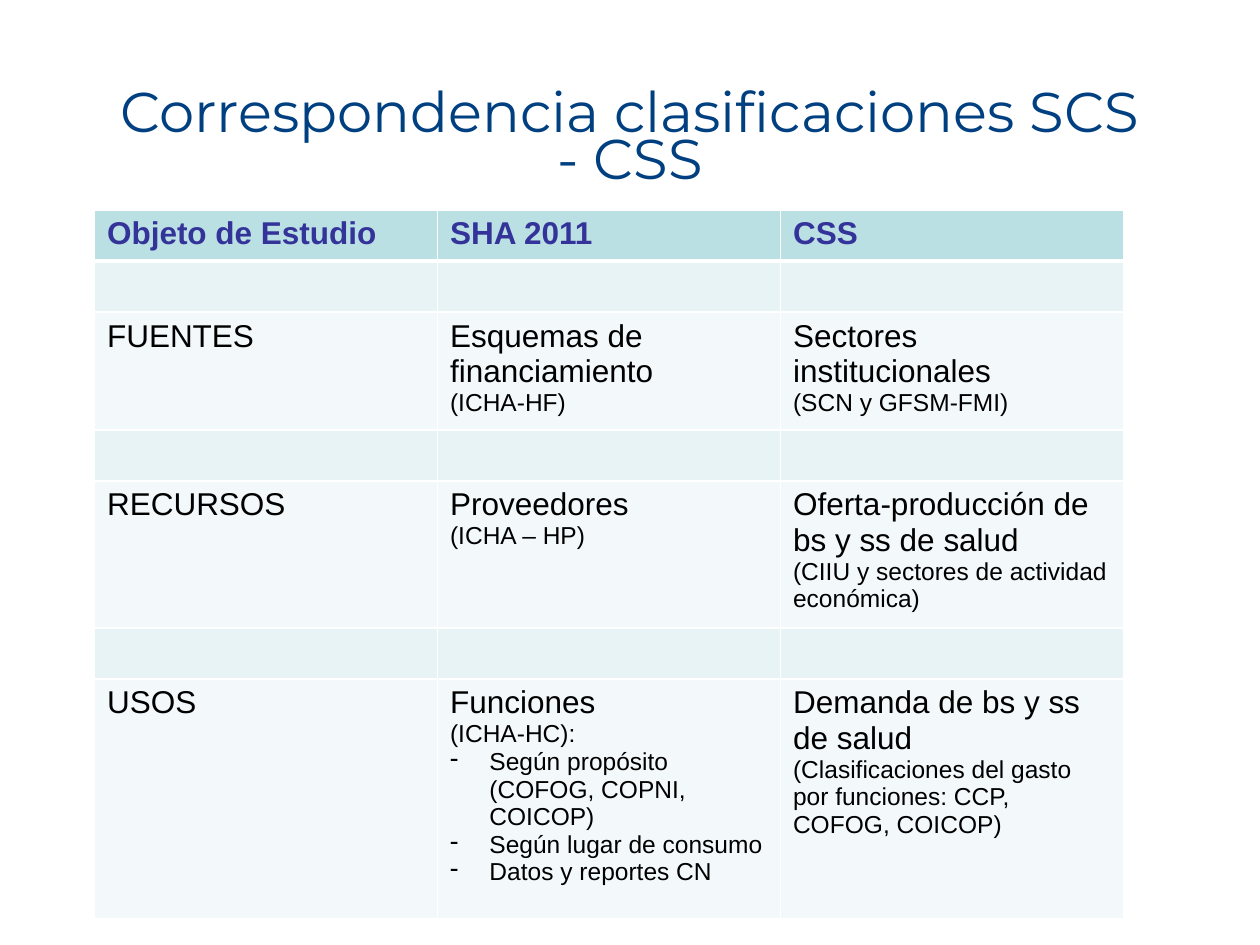
"""Build the slide that matches SCS and CSS health account classifications."""
import pptx
import pptx.dml.color
import pptx.enum.text
import pptx.oxml.ns
import pptx.oxml.xmlchemy
import pptx.util

Pt = pptx.util.Pt
THEME = {
    "title": {"name": "Montserrat", "size": Pt(32), "color": "004080"},
    "header": {"name": "Arial", "size": Pt(18), "bold": True, "color": "333399"},
    "body": {"name": "Arial", "size": Pt(18), "bold": False, "color": "000000"},
    "detail": {"name": "Arial", "size": Pt(14), "bold": False, "color": "000000"},
    "fills": {"header": "BBE0E3", "gap": "E7F3F4", "body": "F3F9FA"},
    "border": "FFFFFF",
}
HEADER = ["Objeto de Estudio", "SHA 2011", "CSS"]
GAP = ["", "", ""]
ROWS = [
    ("header", 29.2, HEADER),
    ("gap", 29.2, GAP),
    ("body", 63.4, [
        "FUENTES",
        "Esquemas de financiamiento\n(ICHA-HF)",
        "Sectores institucionales\n(SCN y GFSM-FMI)",
    ]),
    ("gap", 29.2, GAP),
    ("body", 78.9, [
        "RECURSOS",
        "Proveedores\n(ICHA – HP)",
        "Oferta-producción de bs y ss de salud\n(CIIU y sectores de actividad económica)",
    ]),
    ("gap", 29.2, GAP),
    ("body", 137.1, [
        "USOS",
        "Funciones\n(ICHA-HC):\n- Según propósito (COFOG, COPNI, COICOP)\n"
        "- Según lugar de consumo\n- Datos y reportes CN",
        "Demanda de bs y ss de salud\n"
        "(Clasificaciones del gasto por funciones: CCP, COFOG, COICOP)",
    ]),
]


def set_font(font, style):
    for key, value in THEME[style].items():
        if key == "color":
            font.color.rgb = pptx.dml.color.RGBColor.from_string(value)
        else:
            setattr(font, key, value)


def add_child(parent, tag, **attributes):
    child = pptx.oxml.xmlchemy.OxmlElement(tag)
    for key, value in attributes.items():
        child.set(key, str(value))
    parent.append(child)
    return child


prs = pptx.Presentation()
prs.slide_width, prs.slide_height = Pt(720), Pt(540)
s = prs.slides.add_slide(prs.slide_layouts[6])

sp = s.shapes.add_textbox(Pt(54), Pt(48), Pt(612), Pt(66))
tf = sp.text_frame
tf.word_wrap = True
tf.vertical_anchor = pptx.enum.text.MSO_ANCHOR.MIDDLE
p = tf.paragraphs[0]
p.alignment = pptx.enum.text.PP_ALIGN.CENTER
p.line_spacing = 0.7
r = p.add_run()
r.text = "Correspondencia clasificaciones SCS - CSS"
set_font(r.font, "title")

height = sum(row[1] for row in ROWS)
table = s.shapes.add_table(len(ROWS), 3, Pt(54), Pt(120), Pt(588), Pt(height)).table
for i, (kind, row_height, texts) in enumerate(ROWS):
    table.rows[i].height = Pt(row_height)
    for j, text in enumerate(texts):
        cell = table.cell(i, j)
        tcPr = cell._tc.get_or_add_tcPr()
        for side in "LRTB":
            thick = (kind == "header" and side == "B") or (i == 1 and side == "T")
            ln = add_child(tcPr, f"a:ln{side}", w=Pt(3 if thick else 1))
            add_child(add_child(ln, "a:solidFill"), "a:srgbClr", val=THEME["border"])
        cell.fill.solid()
        cell.fill.fore_color.rgb = pptx.dml.color.RGBColor.from_string(THEME["fills"][kind])
        tf = cell.text_frame
        for k, line in enumerate(text.split("\n") if text else []):
            p = tf.add_paragraph() if k else tf.paragraphs[0]
            if line.startswith("- "):
                pPr = p._p.get_or_add_pPr()
                pPr.set("marL", str(Pt(22.5)))
                pPr.set("indent", str(Pt(-22.5)))
                add_child(pPr, "a:buFontTx")
                add_child(pPr, "a:buChar", char="-")
            r = p.add_run()
            r.text = line.removeprefix("- ")
            set_font(r.font, "detail" if k else kind)

prs.save("out.pptx")
